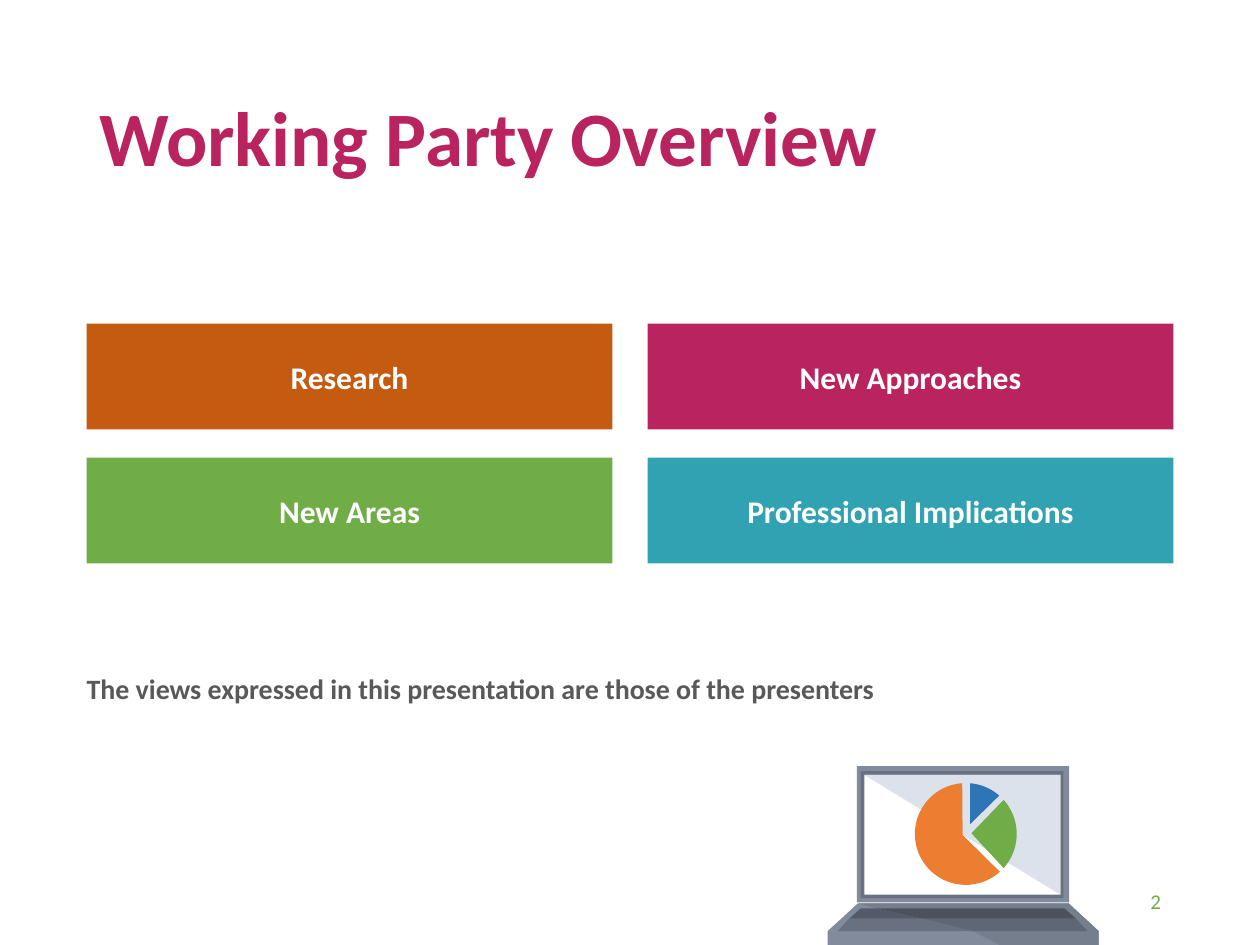
from math import cos, radians, sin

from pptx import Presentation
from pptx.dml.color import RGBColor
from pptx.enum.shapes import MSO_SHAPE
from pptx.enum.text import MSO_ANCHOR, PP_ALIGN
from pptx.util import Pt

COLORS = {
    "magenta": "B9235E", "rust": "C55A11", "green": "70AD47", "teal": "30A2B1",
    "white": "FFFFFF", "gray": "595959", "orange": "ED7D31", "blue": "2E75B6",
    "case": "818B9B", "case_shade": "757E8D", "bezel": "697180", "glare": "DCE2EC",
    "keys_light": "555A68", "keys_dark": "4C515B", "front_dark": "5F6676",
}


def paint(shape, color):
    shape.fill.solid()
    shape.fill.fore_color.rgb = RGBColor.from_string(COLORS[color])
    shape.line.fill.background()
    shape.shadow.inherit = False


def write(shape, text, size, color, bold=True, align=PP_ALIGN.LEFT,
          anchor=MSO_ANCHOR.MIDDLE, inset=None):
    frame = shape.text_frame
    frame.word_wrap = True
    frame.vertical_anchor = anchor
    if inset is not None:
        frame.margin_left = frame.margin_right = Pt(inset)
        frame.margin_top = frame.margin_bottom = Pt(inset)
    para = frame.paragraphs[0]
    para.text = text
    para.alignment = align
    para.font.name = "Calibri"
    para.font.size = Pt(size)
    para.font.bold = bold
    para.font.color.rgb = RGBColor.from_string(COLORS[color])


deck = Presentation()
deck.slide_width, deck.slide_height = Pt(720), Pt(540)
page = deck.slides.add_slide(deck.slide_layouts[5])
shapes = page.shapes
left, content_width = 49.5, 621

# Title
title = shapes.title
title.left, title.top, title.width, title.height = Pt(left), Pt(28.8), Pt(content_width), Pt(104.4)
write(title, "Working Party Overview", 44, "magenta")
title.text_frame.paragraphs[0].line_spacing = 0.9

# Topic boxes in a two by two grid
topics = [
    [("Research", "rust"), ("New Approaches", "magenta")],
    [("New Areas", "green"), ("Professional Implications", "teal")],
]
box_width, box_height = 300.5, 60.5
column_step, row_step = content_width - box_width, 76.5
for row, topic_row in enumerate(topics):
    for column, (topic, color) in enumerate(topic_row):
        box = shapes.add_shape(
            MSO_SHAPE.RECTANGLE, Pt(left + column * column_step),
            Pt(185 + row * row_step), Pt(box_width), Pt(box_height))
        paint(box, color)
        write(box, topic, 18, "white", align=PP_ALIGN.CENTER, inset=3.6)

# Disclaimer and page number
disclaimer = shapes.add_textbox(Pt(left), Pt(383.8), Pt(content_width), Pt(19.4))
write(disclaimer, "The views expressed in this presentation are those of the presenters",
      16, "gray", anchor=MSO_ANCHOR.TOP, inset=0)
page_number = shapes.add_textbox(Pt(508.5), Pt(500.5), Pt(162), Pt(28.8))
write(page_number, "2", 12, "green", bold=False, align=PP_ALIGN.RIGHT)

# Laptop lid, bezel and screen
for color, x, y, width, height in [
    ("case", 489.6, 437.8, 121.4, 77.8),
    ("bezel", 491.8, 440.6, 115.9, 72.7),
    ("white", 493.9, 442.8, 112, 68.4),
]:
    panel = shapes.add_shape(MSO_SHAPE.RECTANGLE, Pt(x), Pt(y), Pt(width), Pt(height))
    paint(panel, color)

# Laptop base, keyboard and screen glare
outlines = [
    ("case", [(610.6, 516.2), (490.3, 516.2), (473, 532.1), (473, 540.7),
              (627.8, 540.7), (627.8, 532.1)]),
    ("case_shade", [(627.8, 540.7), (572.4, 540.7), (555.8, 532.1), (621.4, 532.1),
                    (608.4, 519.1), (500.4, 519.1), (490.3, 516.2), (610.6, 516.2),
                    (627.8, 532.1)]),
    ("bezel", [(555.8, 532.1), (478.8, 532.1), (485.3, 524.9), (527, 524.9)]),
    ("front_dark", [(621.4, 532.1), (555.8, 532.1), (527, 524.9), (614.9, 524.9)]),
    ("keys_light", [(527, 524.9), (485.3, 524.9), (491.8, 519.1), (500.4, 519.1)]),
    ("keys_dark", [(614.9, 524.9), (527, 524.9), (500.4, 519.1), (608.4, 519.1)]),
    ("glare", [(493.9, 442.8), (605.9, 442.8), (605.9, 511.2)]),
]

# Pie slices: tip, then an arc in degrees clockwise from the top
center_x, center_y, radius = 551.9, 476.6, 29.1
for color, tip, start, end in [
    ("orange", (550.1, 477.2), 138, 356),
    ("green", (555.1, 476.2), 48, 132),
    ("blue", (554.4, 470.9), 5, 41),
]:
    arc = [(center_x + radius * sin(radians(angle)), center_y - radius * cos(radians(angle)))
           for angle in [start + (end - start) * step / 40 for step in range(41)]]
    outlines.append((color, [tip] + arc))

for color, points in outlines:
    corners = [(Pt(x), Pt(y)) for x, y in points]
    builder = shapes.build_freeform(*corners[0])
    builder.add_line_segments(corners[1:], close=True)
    paint(builder.convert_to_shape(), color)

deck.save("out.pptx")
